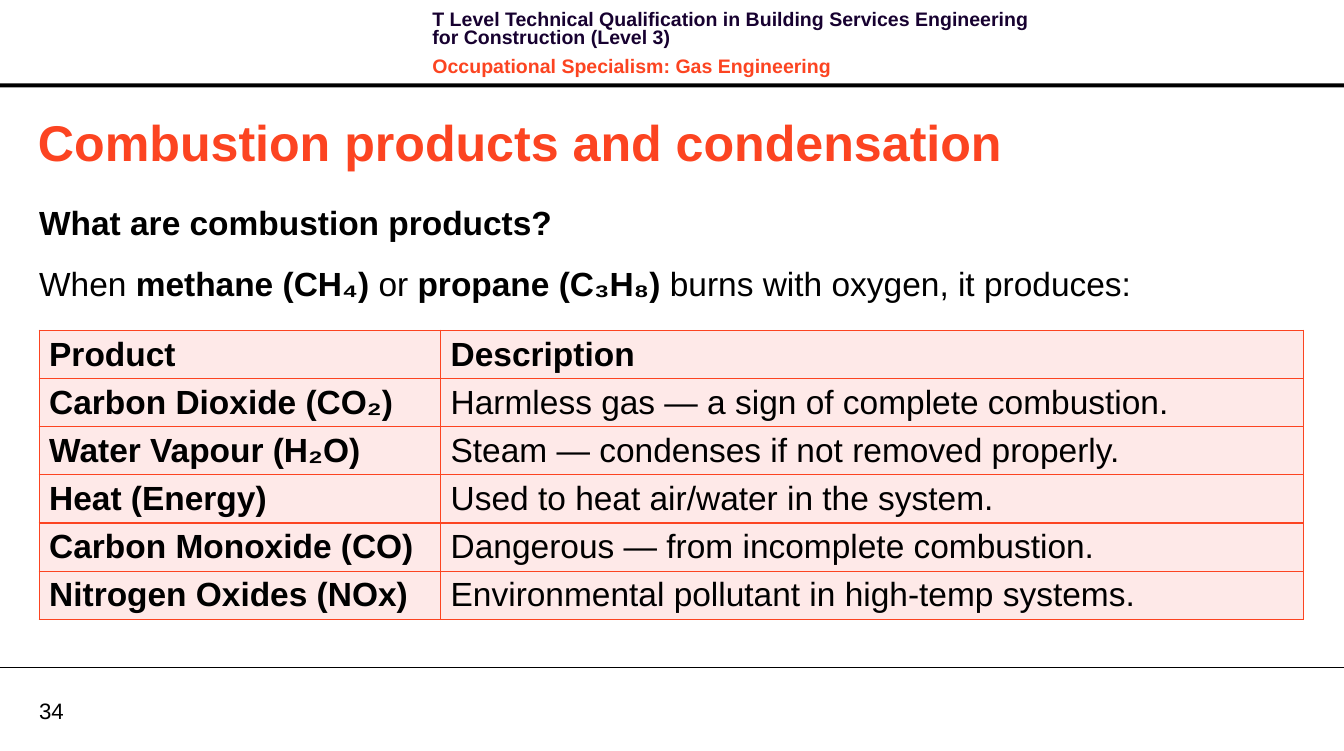
from lxml.etree import SubElement
from pptx import Presentation
from pptx.dml.color import RGBColor
from pptx.enum.shapes import MSO_CONNECTOR, MSO_SHAPE
from pptx.enum.text import MSO_ANCHOR
from pptx.oxml import parse_xml
from pptx.oxml.ns import qn
from pptx.util import Inches, Pt

BLACK = RGBColor(0x00, 0x00, 0x00)
NAVY = RGBColor(0x17, 0x01, 0x30)
ORANGE = RGBColor(0xFC, 0x44, 0x21)
BLUSH = RGBColor(0xFE, 0xE9, 0xE8)
DRAWING_NS = "http://schemas.openxmlformats.org/drawingml/2006/main"

presentation = Presentation()
presentation.slide_width = Inches(13.39)
presentation.slide_height = Inches(7.48)
slide = presentation.slides.add_slide(presentation.slide_layouts[6])
width = presentation.slide_width
margin = Inches(0.39)


def add_text(left, top, box_width, height, inset=True, anchor=MSO_ANCHOR.TOP):
    frame = slide.shapes.add_textbox(left, top, box_width, height).text_frame
    frame.word_wrap = True
    frame.vertical_anchor = anchor
    if not inset:
        frame.margin_left = frame.margin_right = 0
        frame.margin_top = frame.margin_bottom = 0
    return frame


def style(paragraph, size, color, bold=None):
    for run in paragraph.runs:
        run.font.name = "Arial"
        run.font.size = Pt(size)
        run.font.color.rgb = color
        if bold is not None:
            run.font.bold = bold


header_rule = slide.shapes.add_shape(
    MSO_SHAPE.RECTANGLE, 0, Inches(0.83), width, Inches(0.04)
)
header_rule.shadow.inherit = False
header_rule.fill.solid()
header_rule.fill.fore_color.rgb = BLACK
header_rule.line.fill.background()

footer_y = Inches(6.65)
footer_rule = slide.shapes.add_connector(
    MSO_CONNECTOR.STRAIGHT, 0, footer_y, width, footer_y
)
footer_rule.line.color.rgb = BLACK
footer_rule.line.width = Pt(0.75)
SubElement(footer_rule._element.spPr, qn("a:effectLst"))

page_number = add_text(
    margin, Inches(6.94), Inches(0.64), Inches(0.27), False, MSO_ANCHOR.MIDDLE
)
page_number.text = "34"
style(page_number.paragraphs[0], 16, BLACK)

course = add_text(Inches(4.21), Inches(0.07), Inches(6.37), Inches(0.64))
course.text = (
    "T Level Technical Qualification in Building Services Engineering "
    "for Construction (Level 3)\nOccupational Specialism: Gas Engineering"
)
for line, color in zip(course.paragraphs, (NAVY, ORANGE)):
    line.line_spacing = Pt(13.1)
    line.space_after = Pt(4)
    style(line, 14, color, True)
course.paragraphs[1].space_before = Pt(4)

title = add_text(
    Inches(0.28), Inches(1.05), Inches(12.72), Inches(0.71), anchor=MSO_ANCHOR.MIDDLE
)
title.text = "Combustion products and condensation"
style(title.paragraphs[0], 36, ORANGE, True)

intro = add_text(margin, Inches(1.97), Inches(12.13), Inches(1.2), False)
intro.text = "What are combustion products?"
question = intro.paragraphs[0]
answer = intro.add_paragraph()
for words, bold in (
    ("When ", False),
    ("methane (CH₄)", True),
    (" or ", False),
    ("propane (C₃H₈)", True),
    (" burns with oxygen, it produces:", False),
):
    phrase = answer.add_run()
    phrase.text = words
    phrase.font.bold = bold
style(question, 24, BLACK, True)
style(answer, 24, BLACK)
for paragraph in (question, answer):
    paragraph.line_spacing = 1.1
    paragraph.space_after = Pt(12)

products = (
    ("Product", "Description"),
    ("Carbon Dioxide (CO₂)", "Harmless gas — a sign of complete combustion."),
    ("Water Vapour (H₂O)", "Steam — condenses if not removed properly."),
    ("Heat (Energy)", "Used to heat air/water in the system."),
    ("Carbon Monoxide (CO)", "Dangerous — from incomplete combustion."),
    ("Nitrogen Oxides (NOx)", "Environmental pollutant in high-temp systems."),
)
row_height = Inches(0.47)
product_table = slide.shapes.add_table(
    len(products), 2, margin, Inches(3.29), Inches(12.6), row_height * len(products)
).table
product_table.columns[0].width = Inches(4)
product_table.columns[1].width = Inches(8.6)

for row_index, product in enumerate(products):
    product_table.rows[row_index].height = row_height
    for column_index, words in enumerate(product):
        cell = product_table.cell(row_index, column_index)
        cell.text = words
        cell.vertical_anchor = MSO_ANCHOR.MIDDLE
        cell.margin_top = cell.margin_bottom = Inches(0.04)
        cell.fill.solid()
        cell.fill.fore_color.rgb = BLUSH
        style(
            cell.text_frame.paragraphs[0],
            24,
            BLACK,
            row_index == 0 or column_index == 0,
        )
        cell_properties = cell._tc.get_or_add_tcPr()
        for position, side in enumerate(("lnL", "lnR", "lnT", "lnB")):
            border = parse_xml(
                f'<a:{side} xmlns:a="{DRAWING_NS}" w="{Pt(1)}"><a:solidFill>'
                f'<a:srgbClr val="{ORANGE}"/></a:solidFill></a:{side}>'
            )
            cell_properties.insert(position, border)

presentation.save("out.pptx")
